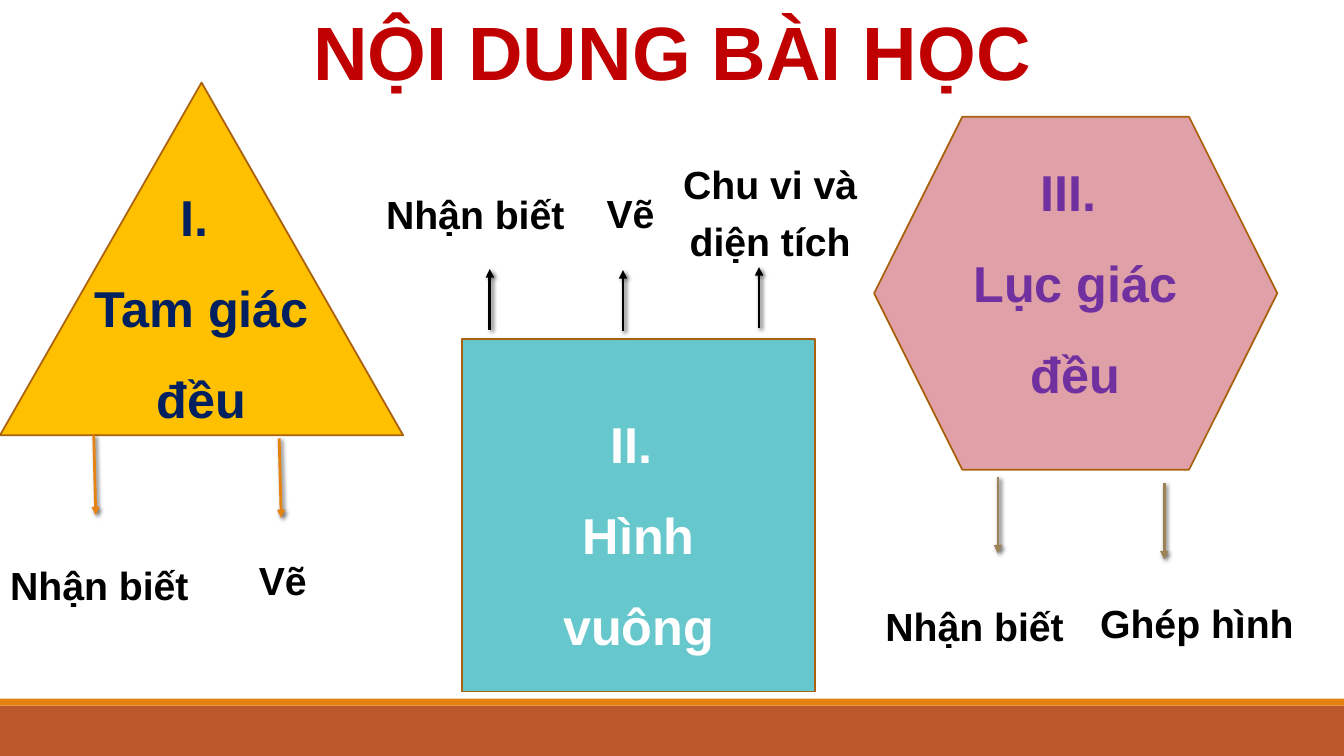
"""Build the lesson contents slide with three regular shapes and their topics."""
import pptx
import pptx.util
import pptx.dml.color
import pptx.enum.shapes
import pptx.enum.text
import pptx.oxml
from dataclasses import dataclass

Pt = pptx.util.Pt
Shape = pptx.enum.shapes.MSO_SHAPE
NAMESPACE = "http://schemas.openxmlformats.org/drawingml/2006/main"


@dataclass(frozen=True)
class Theme:
    font: str = "Arial"
    title_size: int = 54
    heading_size: int = 36
    topic_size: int = 28
    title: str = "C00000"
    outline: str = "A9610D"
    footer: str = "BD582C"
    orange: str = "E48312"
    tan: str = "9B8357"
    black: str = "000000"
    yellow: str = "FFC000"
    teal: str = "66C7CC"
    pink: str = "DFA1A7"
    navy: str = "002060"
    white: str = "FFFFFF"
    purple: str = "7030A0"


theme = Theme()
presentation = pptx.Presentation()
presentation.slide_width = Pt(960)
presentation.slide_height = Pt(540)
slide = presentation.slides.add_slide(presentation.slide_layouts[6])


def add_figure(kind, left, top, width, height, fill, outline=None):
    shape = slide.shapes.add_shape(kind, Pt(left), Pt(top), Pt(width), Pt(height))
    shape.shadow.inherit = False
    shape.fill.solid()
    shape.fill.fore_color.rgb = pptx.dml.color.RGBColor.from_string(fill)
    if outline:
        shape.line.color.rgb = pptx.dml.color.RGBColor.from_string(outline)
        shape.line.width = Pt(1.25)
    else:
        shape.line.fill.background()


def add_label(text, left, top, width, height, size, color, spacing=1.5, wrap=True):
    box = slide.shapes.add_textbox(Pt(left), Pt(top), Pt(width), Pt(height))
    box.text_frame.word_wrap = wrap
    box.text_frame.text = text
    for paragraph in box.text_frame.paragraphs:
        paragraph.alignment = pptx.enum.text.PP_ALIGN.CENTER
        paragraph.line_spacing = spacing
        for run in paragraph.runs:
            run.font.name = theme.font
            run.font.size = Pt(size)
            run.font.bold = True
            run.font.color.rgb = pptx.dml.color.RGBColor.from_string(color)


add_figure(Shape.RECTANGLE, 0, 504, 960, 36, theme.footer)
add_figure(Shape.RECTANGLE, 0, 499, 960, 5, theme.orange)
add_label("NỘI DUNG BÀI HỌC", 213.8, 0, 532.8, 72.7, theme.title_size, theme.title, 1.0, False)

figures = [
    (Shape.ISOSCELES_TRIANGLE, 0, 59, 288, theme.yellow, "I. \nTam giác đều", 108, theme.navy),
    (Shape.RECTANGLE, 330.2, 242, 252, theme.teal, "II. \nHình vuông", 270, theme.white),
    (Shape.HEXAGON, 624.4, 83.5, 288, theme.pink, "III. \nLục giác đều", 90, theme.purple),
]
figure_height = 252
heading_width = 172.8
for kind, left, top, width, fill, heading, heading_top, color in figures:
    add_figure(kind, left, top, width, figure_height, fill, theme.outline)
    heading_left = left + (width - heading_width) / 2
    add_label(heading, heading_left, heading_top, heading_width, 204, theme.heading_size, color)

arrows = [
    (67, 311, 68.4, 368, theme.orange),
    (199.4, 313.2, 200.9, 370, theme.orange),
    (349.9, 235.4, 349.9, 192.2, theme.black),
    (445, 236.2, 445, 193, theme.black),
    (542.2, 234, 542.2, 190.8, theme.black),
    (712.8, 340.6, 712.8, 395.3, theme.tan),
    (831.6, 344.9, 831.6, 399.6, theme.tan),
]
for start_x, start_y, end_x, end_y, color in arrows:
    arrow = slide.shapes.add_connector(
        pptx.enum.shapes.MSO_CONNECTOR.STRAIGHT, Pt(start_x), Pt(start_y), Pt(end_x), Pt(end_y)
    )
    arrow.line.width = Pt(2)
    arrow.line.color.rgb = pptx.dml.color.RGBColor.from_string(color)
    properties = arrow.line._get_or_add_ln()
    properties.append(pptx.oxml.parse_xml(f'<a:tailEnd xmlns:a="{NAMESPACE}" type="triangle"/>'))
    properties.getparent().append(pptx.oxml.parse_xml(
        f'<a:effectLst xmlns:a="{NAMESPACE}">'
        f'<a:outerShdw blurRad="{Pt(3)}" dist="{Pt(2)}" dir="2700000" algn="tl" rotWithShape="0">'
        f'<a:srgbClr val="{theme.black}"><a:alpha val="60000"/></a:srgbClr>'
        '</a:outerShdw></a:effectLst>'
    ))

topics = [
    ("Nhận biết", -8.6, 380.9, 159.1, 58.3, 1.5),
    ("Vẽ", 160.6, 377.3, 82.8, 51.8, 1.5),
    ("Nhận biết", 261.4, 115.9, 156.2, 58.3, 1.5),
    ("Vẽ", 409, 115.2, 82.8, 51.8, 1.5),
    ("Chu vi và diện tích", 478.8, 104.4, 142.6, 88.6, 1.2),
    ("Nhận biết", 624.2, 409.7, 144, 58.3, 1.5),
    ("Ghép hình", 762.5, 407.5, 185, 58.3, 1.5),
]
for text, left, top, width, height, spacing in topics:
    add_label(text, left, top, width, height, theme.topic_size, theme.black, spacing)

presentation.save("out.pptx")
